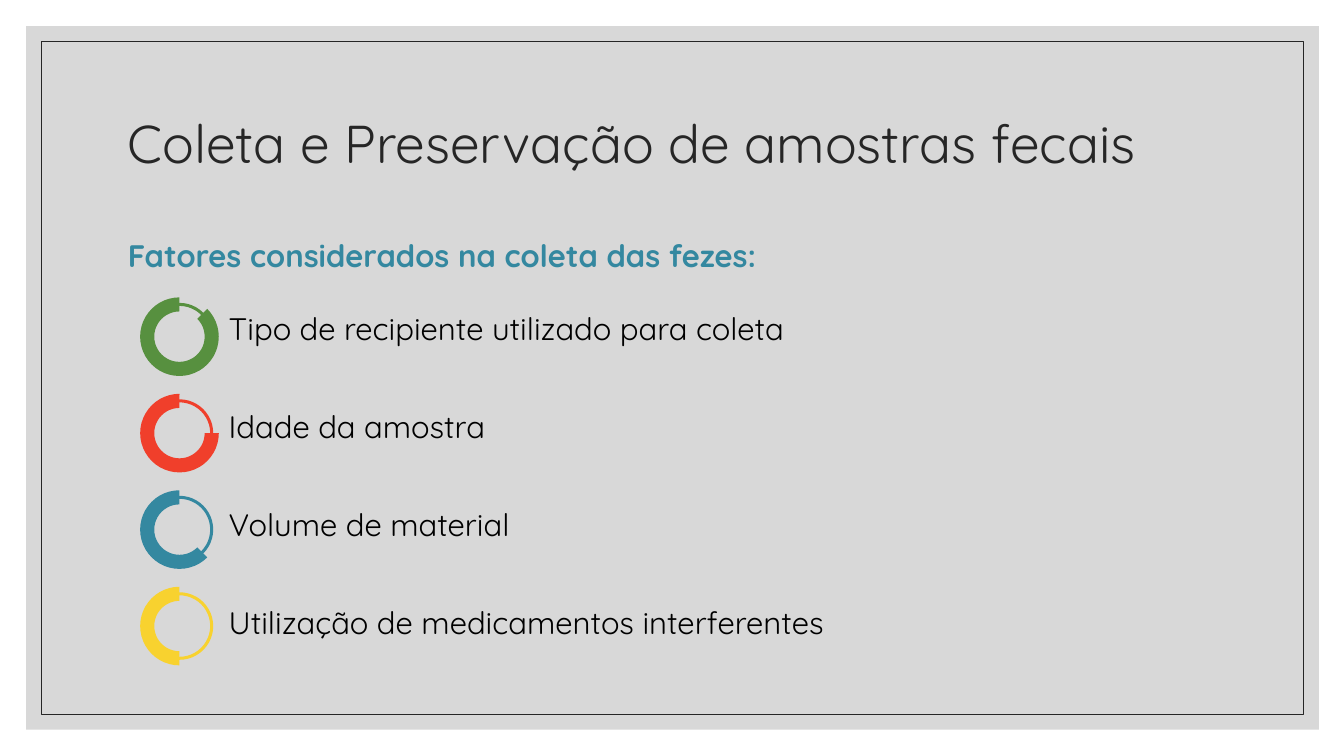
from pptx import Presentation
from pptx.dml.color import RGBColor
from pptx.enum import shapes, text
from pptx.oxml.xmlchemy import OxmlElement
from pptx.util import Inches, Pt

COLORS = {
    "panel": "BFBFBF", "frame": "262626", "title": "262626", "body": "000000",
    "green": "57903F", "red": "F03F2B", "blue": "3488A0", "yellow": "F8D22F",
}
FONT = "Quicksand"
FACTORS = [
    ("Tipo de recipiente utilizado para coleta", "green"),
    ("Idade da amostra", "red"),
    ("Volume de material", "blue"),
    ("Utilização de medicamentos interferentes", "yellow"),
]

presentation = Presentation()
presentation.slide_width = Inches(13.33)
presentation.slide_height = Inches(7.5)
slide = presentation.slides.add_slide(presentation.slide_layouts[6])


def add_shape(kind, left, top, width, height, fill=None):
    shape = slide.shapes.add_shape(
        kind, Inches(left), Inches(top), Inches(width), Inches(height))
    shape.shadow.inherit = False
    shape.line.fill.background()
    if fill:
        shape.fill.solid()
        shape.fill.fore_color.rgb = RGBColor.from_string(COLORS[fill])
    else:
        shape.fill.background()
    return shape


def add_paragraph(frame, content, size, color, bold=False):
    """Write into the empty first paragraph, or append a new one."""
    paragraph = frame.paragraphs[0] if not frame.text else frame.add_paragraph()
    paragraph.text = content
    paragraph.font.name = FONT
    paragraph.font.size = Pt(size)
    paragraph.font.bold = bold
    paragraph.font.color.rgb = RGBColor.from_string(COLORS[color])
    return paragraph


# Panel and frame
panel = add_shape(shapes.MSO_SHAPE.RECTANGLE, 0.26, 0.26, 12.82, 6.98, "panel")
alpha = OxmlElement("a:alpha")
alpha.set("val", "60000")
panel.fill._xPr.solidFill.srgbClr.append(alpha)

frame = add_shape(shapes.MSO_SHAPE.RECTANGLE, 0.41, 0.41, 12.52, 6.68)
frame.line.color.rgb = RGBColor.from_string(COLORS["frame"])
frame.line.width = Pt(0.5)

# Title
title = slide.shapes.add_textbox(Inches(1.17), Inches(0.7), Inches(11), Inches(1.5))
title.text_frame.word_wrap = True
title.text_frame.vertical_anchor = text.MSO_ANCHOR.MIDDLE
heading = add_paragraph(
    title.text_frame, "Coleta e Preservação de amostras fecais", 38, "title")
heading.line_spacing = 0.9

# List of factors
body = slide.shapes.add_textbox(Inches(1.17), Inches(2.3), Inches(11), Inches(4.21))
body.text_frame.word_wrap = True
add_paragraph(body.text_frame, "Fatores considerados na coleta das fezes:",
              22.2, "blue", bold=True)
for row, (factor, color) in enumerate(FACTORS):
    paragraph = add_paragraph(body.text_frame, factor, 22.2, "body")
    paragraph.space_before = Pt(43.5 if row else 25)
    paragraph._p.get_or_add_pPr().set("marL", str(Inches(1)))

# Rings: each thick arc ends at the top and starts 45° later than the one above
RING, ARC = 0.67, 0.78
CENTER_X, FIRST_Y, PITCH = 1.78, 3.34, 0.957
for row, (factor, color) in enumerate(FACTORS):
    center_y = FIRST_Y + row * PITCH
    ring = add_shape(shapes.MSO_SHAPE.DONUT, CENTER_X - RING / 2,
                     center_y - RING / 2, RING, RING, color)
    ring.adjustments[0] = 0.03 / RING
    arc = add_shape(shapes.MSO_SHAPE.BLOCK_ARC, CENTER_X - ARC / 2,
                    center_y - ARC / 2, ARC, ARC, color)
    start = (315 + 45 * row) % 360
    arc.adjustments[0] = start * 0.6  # 60000ths of a degree over 100000
    arc.adjustments[1] = 270 * 0.6
    arc.adjustments[2] = 0.14 / ARC

presentation.save("out.pptx")
